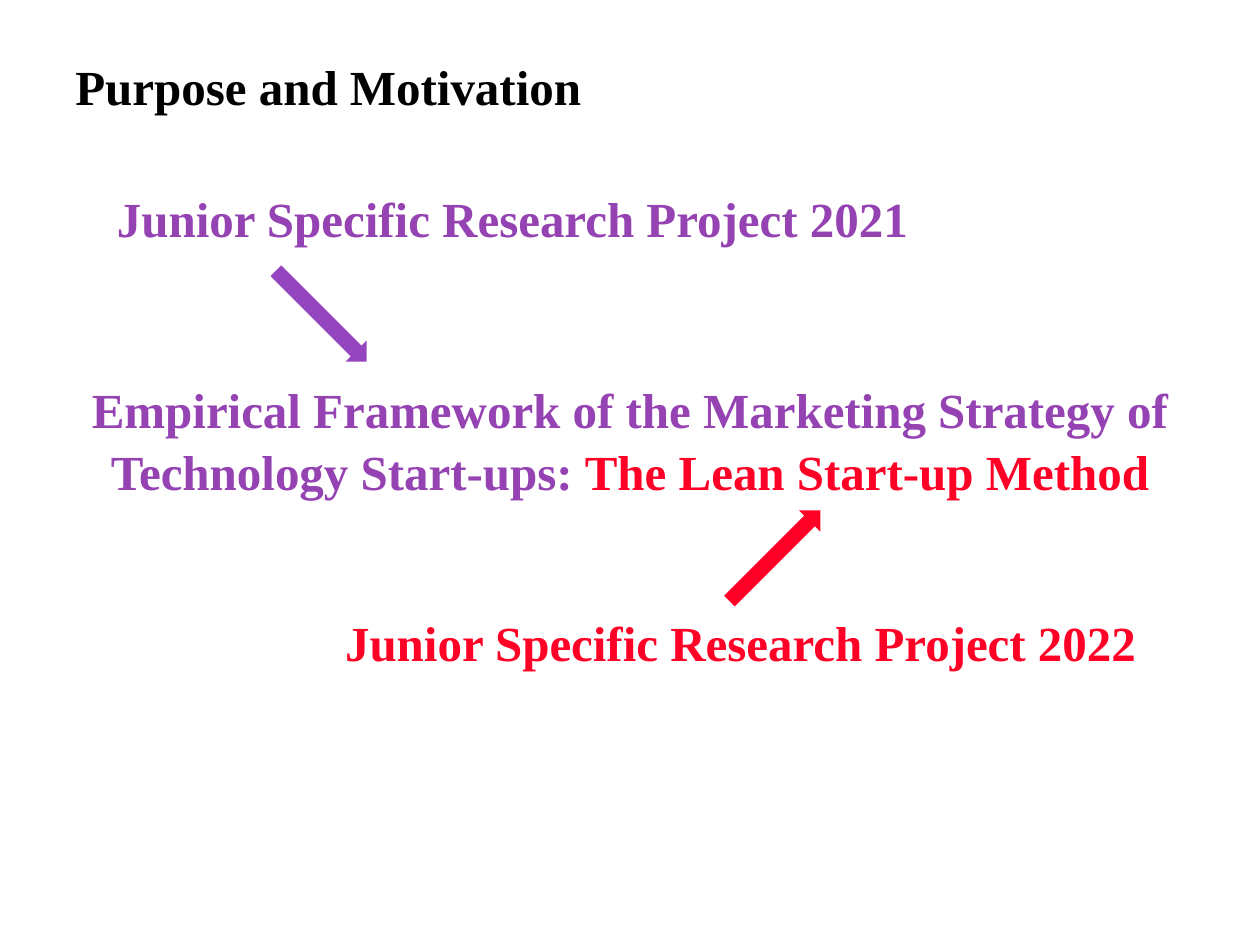
from pptx import Presentation
from pptx.dml.color import RGBColor
from pptx.enum.shapes import MSO_SHAPE
from pptx.enum.text import MSO_ANCHOR, PP_ALIGN
from pptx.util import Inches, Pt

THEME = {
    "font": "Times New Roman", "size": 28,
    "title": "000000", "first": "9542B2", "first_arrow": "9545BF", "second": "FF0126",
}
W, H = 10, 7.5
MARGIN = 0.05 * W
ARROW_W, ARROW_H = 1.02, 0.24

# Content: runs are (text, theme colour); boxes are left, top, width, height
TITLE = [("Purpose and Motivation", "title")]
TOPIC = [
    ("Empirical Framework of the Marketing Strategy of Technology Start-ups: ", "first"),
    ("The Lean Start-up Method", "second"),
]
PROJECTS = [  # year, colour, label left and top, arrow colour, left, top and rotation
    (2021, "first", (0.83, 1.45), "first_arrow", (2.04, 2.39), 45),
    (2022, "second", (2.64, 4.81), "second", (5.64, 4.29), 315),
]

prs = Presentation()
prs.slide_width, prs.slide_height = Inches(W), Inches(H)
s = prs.slides.add_slide(prs.slide_layouts[6])


def color(key):
    return RGBColor.from_string(THEME[key])


def add_text(runs, box, align=PP_ALIGN.LEFT, anchor=MSO_ANCHOR.TOP, spacing=1.0):
    tf = s.shapes.add_textbox(*map(Inches, box)).text_frame
    tf.word_wrap = True
    tf.vertical_anchor = anchor
    p = tf.paragraphs[0]
    p.alignment, p.line_spacing = align, spacing
    for text, key in runs:
        r = p.add_run()
        r.text = text
        r.font.name, r.font.size, r.font.bold = THEME["font"], Pt(THEME["size"]), True
        r.font.color.rgb = color(key)


def add_arrow(left, top, key, rotation):
    sp = s.shapes.add_shape(MSO_SHAPE.RIGHT_ARROW,
                            *map(Inches, (left, top, ARROW_W, ARROW_H)))
    sp.rotation = rotation
    sp.shadow.inherit = False
    sp.fill.solid()
    sp.fill.fore_color.rgb = color(key)
    sp.line.fill.background()


# Title and central topic
add_text(TITLE, (MARGIN, 0.21, 9.07, 0.94), anchor=MSO_ANCHOR.MIDDLE)
add_text(TOPIC, (MARGIN, 2.94, W - 2 * MARGIN, 1.1), align=PP_ALIGN.CENTER, spacing=1.05)

# Projects, each pointing at its part of the topic
for year, key, label_at, arrow_key, arrow_at, rotation in PROJECTS:
    add_arrow(*arrow_at, arrow_key, rotation)
    add_text([(f"Junior Specific Research Project {year}", key)], (*label_at, 6.61, 0.57))

prs.save("out.pptx")
